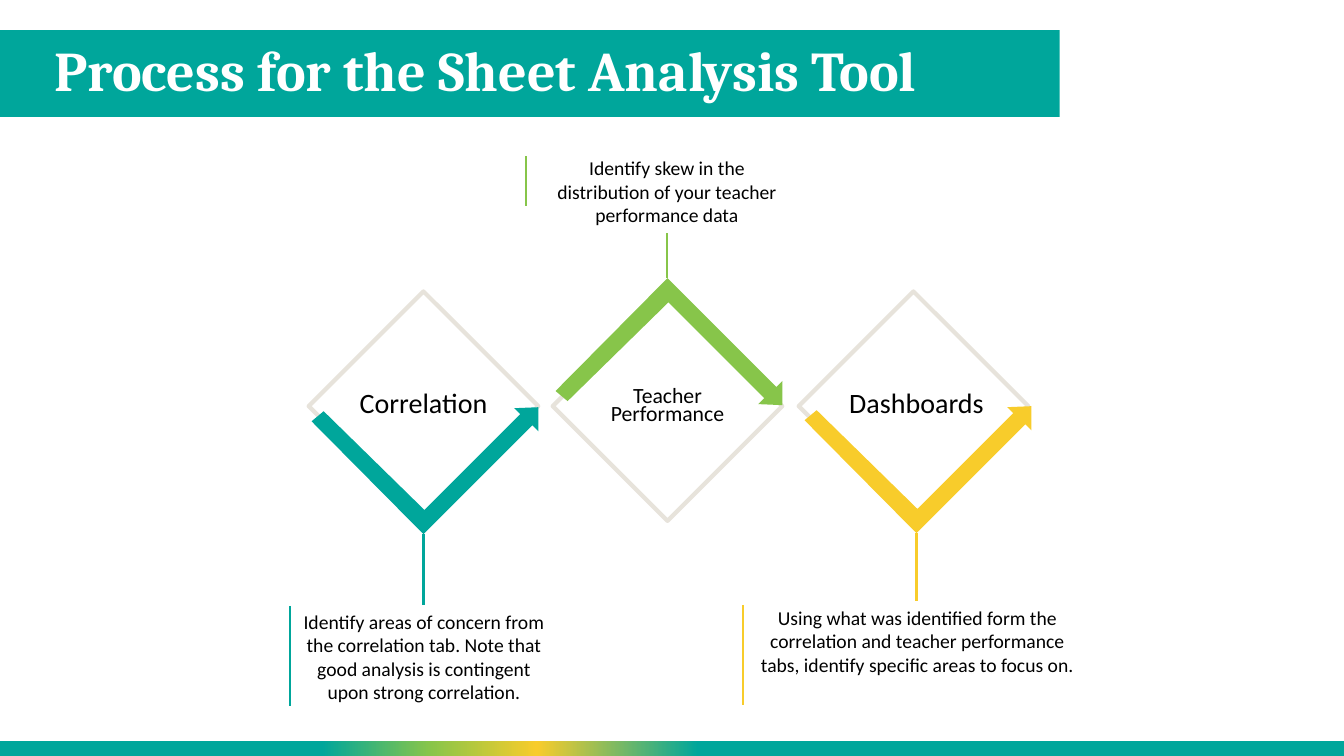
from dataclasses import dataclass

import lxml.etree
import pptx
import pptx.dml.color
import pptx.enum.shapes
import pptx.enum.text
import pptx.oxml.ns
import pptx.util

Inches = pptx.util.Inches
Pt = pptx.util.Pt
RGBColor = pptx.dml.color.RGBColor
Shape = pptx.enum.shapes.MSO_SHAPE
Align = pptx.enum.text.PP_ALIGN
Anchor = pptx.enum.text.MSO_ANCHOR
qn = pptx.oxml.ns.qn

TEAL = RGBColor(0x00, 0xA6, 0x9B)
GREEN = RGBColor(0x87, 0xC5, 0x4A)
YELLOW = RGBColor(0xF8, 0xCC, 0x2B)
STONE = RGBColor(0xE7, 0xE3, 0xDB)
WHITE = RGBColor(0xFF, 0xFF, 0xFF)
BLACK = RGBColor(0x00, 0x00, 0x00)

FOOTER_STOPS = [(0, TEAL), (24, TEAL), (32, GREEN), (40, YELLOW), (52, TEAL), (100, TEAL)]
ARROW_FROM_TIP = [
    (-0.99, 1.22), (0.01, 0.24), (0.96, 1.19), (0.9, 1.25), (1.14, 1.26),
    (1.14, 1.02), (1.08, 1.08), (0, 0), (-1.11, 1.12),
]
DIAMOND_SIDE = 1.61
DIAMOND_MIDDLE = 4.03
LABEL_WIDTH = 1.92


@dataclass
class Box:
    left: float
    top: float
    width: float
    height: float

    def lengths(self):
        return [Inches(n) for n in (self.left, self.top, self.width, self.height)]


@dataclass
class Step:
    label: str
    label_size: float
    label_spacing: float
    note: str
    color: RGBColor
    center: float
    tip: tuple
    points_up: bool
    stem_end: float
    rule: tuple
    note_box: Box


STEPS = [
    Step("Correlation", 20, 0.9,
         "Identify areas of concern from the correlation tab. Note that good "
         "analysis is contingent upon strong correlation.",
         TEAL, 4.2, (4.2, 5.3), False, 6, (2.88, 6.01, 7), Box(2.88, 6, 2.65, 1.04)),
    Step("Teacher Performance", 15.5, 0.7,
         "Identify skew in the distribution of your teacher performance data",
         GREEN, 6.62, (6.62, 2.76), True, 2.31, (5.22, 1.55, 2.04), Box(5.29, 1.5, 2.65, 0.81)),
    Step("Dashboards", 20, 0.9,
         "Using what was identified form the correlation and teacher performance "
         "tabs, identify specific areas to focus on.",
         YELLOW, 9.06, (9.09, 5.29), False, 5.96, (7.37, 6, 6.99), Box(7.37, 5.96, 3.46, 0.81)),
]


def add_rectangle(page, box, color=None):
    shape = page.shapes.add_shape(Shape.RECTANGLE, *box.lengths())
    shape.shadow.inherit = False
    shape.line.fill.background()
    if color is None:
        shape.fill.background()
    else:
        shape.fill.solid()
        shape.fill.fore_color.rgb = color
    return shape


def add_text(page, box, text, size, color=BLACK, font="Calibri", bold=False,
             align=Align.CENTER, anchor=Anchor.TOP, spacing=1.0):
    frame = page.shapes.add_textbox(*box.lengths()).text_frame
    frame.word_wrap = True
    frame.vertical_anchor = anchor
    frame.text = text
    para = frame.paragraphs[0]
    para.alignment = align
    para.line_spacing = spacing
    span = para.runs[0]
    span.font.name = font
    span.font.size = Pt(size)
    span.font.bold = bold
    span.font.color.rgb = color


def add_vertical_line(page, x, start, end, color):
    line = page.shapes.add_connector(
        pptx.enum.shapes.MSO_CONNECTOR.STRAIGHT,
        Inches(x), Inches(start), Inches(x), Inches(end))
    line.line.color.rgb = color
    line.line.width = Pt(1.5)
    lxml.etree.SubElement(line._element.spPr, qn("a:effectLst"))


def add_bent_arrow(page, step):
    tip_x, tip_y = step.tip
    direction = 1 if step.points_up else -1
    points = [(Inches(tip_x + x), Inches(tip_y + direction * y)) for x, y in ARROW_FROM_TIP]
    builder = page.shapes.build_freeform(*points[0])
    builder.add_line_segments(points[1:], close=True)
    arrow = builder.convert_to_shape()
    arrow.shadow.inherit = False
    arrow.fill.solid()
    arrow.fill.fore_color.rgb = step.color
    arrow.line.fill.background()


def add_title(page, box):
    add_rectangle(page, box, TEAL)
    text_box = Box(box.left + 0.45, box.top, box.width - 0.45, box.height)
    add_text(page, text_box, "Process for the Sheet Analysis Tool", 40, WHITE, "Cambria",
             True, Align.LEFT, Anchor.MIDDLE, 0.9)


def add_footer(page, box):
    footer = add_rectangle(page, box)
    footer.fill.gradient()
    footer.fill.gradient_angle = 0
    stops = footer._element.spPr.find(qn("a:gradFill")).find(qn("a:gsLst"))
    for stop in list(stops):
        stops.remove(stop)
    for percent, color in FOOTER_STOPS:
        stop = lxml.etree.SubElement(stops, qn("a:gs"), pos=str(percent * 1000))
        lxml.etree.SubElement(stop, qn("a:srgbClr"), val=str(color))


def add_step(page, step):
    half = DIAMOND_SIDE / 2
    diamond = add_rectangle(
        page, Box(step.center - half, DIAMOND_MIDDLE - half, DIAMOND_SIDE, DIAMOND_SIDE))
    diamond.rotation = 45
    diamond.line.color.rgb = STONE
    diamond.line.width = Pt(3)
    add_bent_arrow(page, step)
    label_box = Box(step.tip[0] - LABEL_WIDTH / 2, 3.81, LABEL_WIDTH, 0.5)
    add_text(page, label_box, step.label, step.label_size, spacing=step.label_spacing)
    add_vertical_line(page, *step.tip, step.stem_end, step.color)
    add_vertical_line(page, *step.rule, step.color)
    add_text(page, step.note_box, step.note, 14)


def main():
    deck = pptx.Presentation()
    deck.slide_width = Inches(13.33)
    deck.slide_height = Inches(7.5)
    page = deck.slides.add_slide(deck.slide_layouts[6])
    add_title(page, Box(-0.01, 0.3, 10.52, 0.86))
    add_footer(page, Box(-0.01, 7.35, 13.34, 0.15))
    for step in STEPS:
        add_step(page, step)
    deck.save("out.pptx")


if __name__ == "__main__":
    main()
